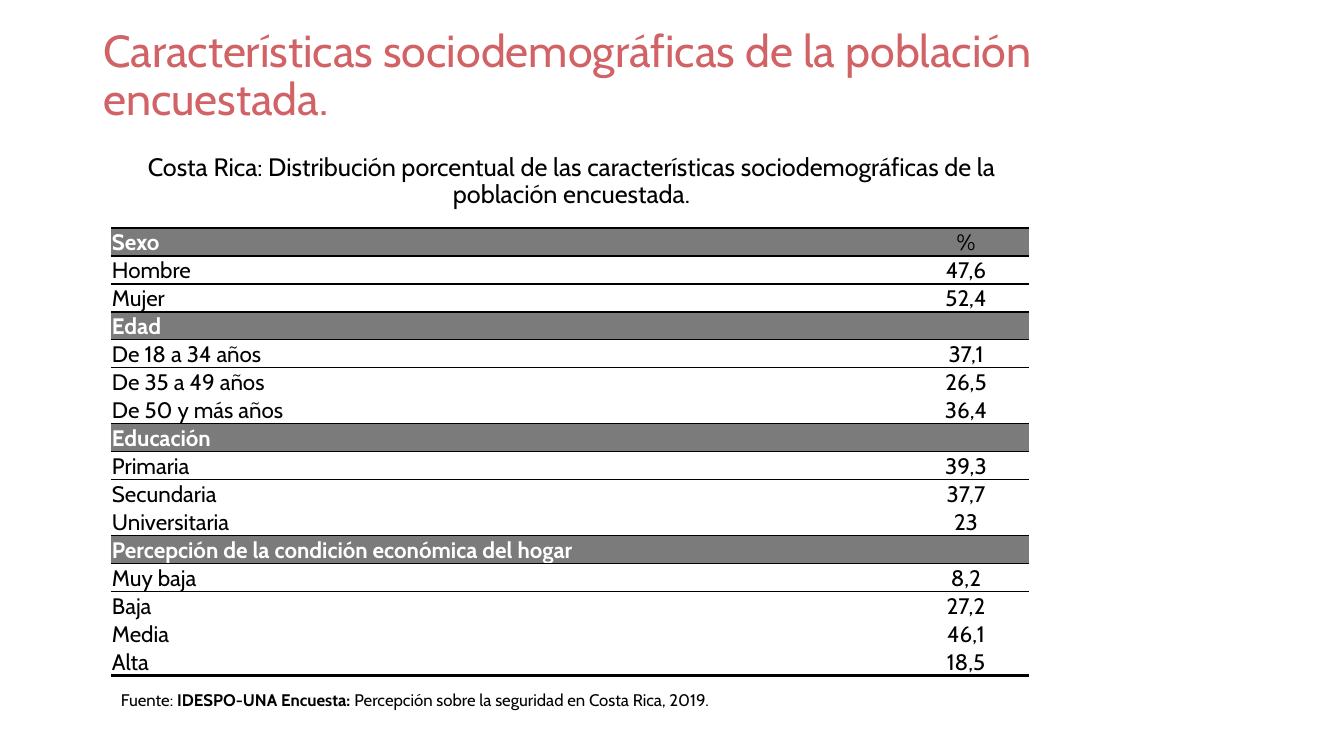
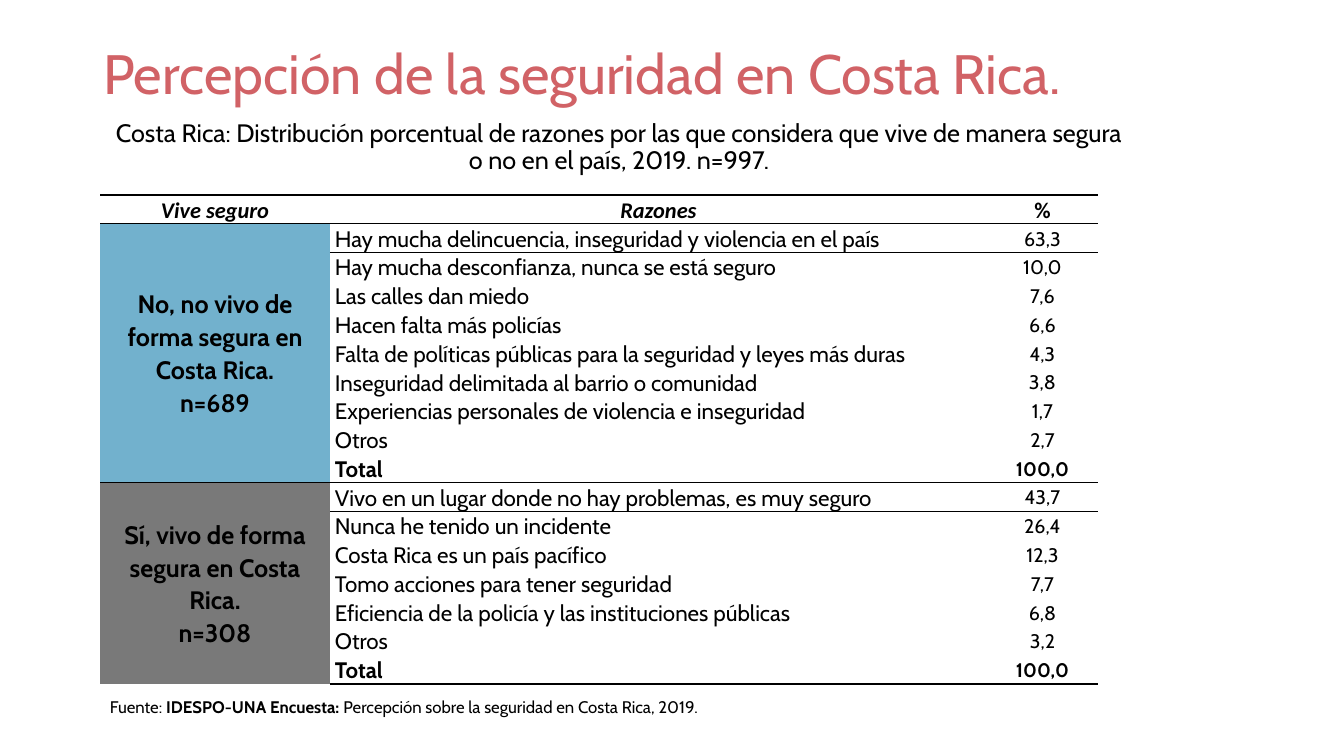
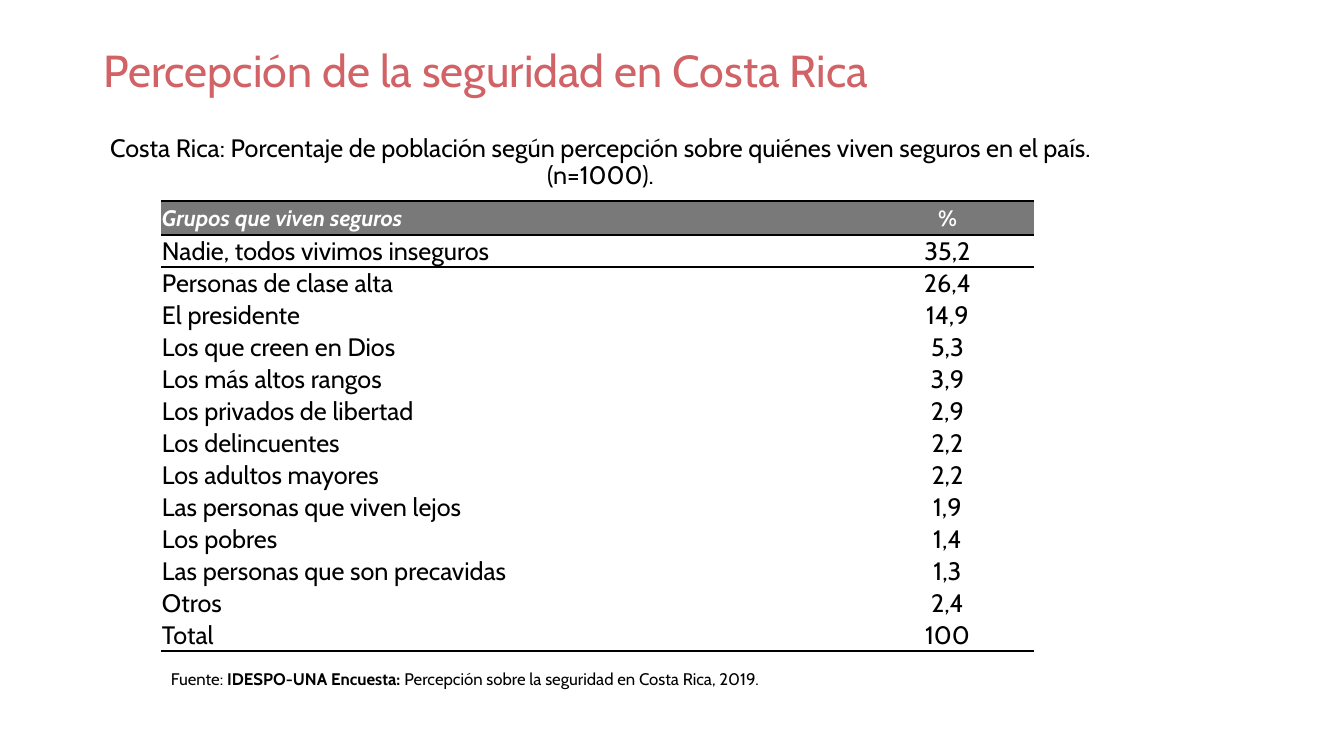
from dataclasses import dataclass, replace

from lxml.etree import SubElement
from pptx import Presentation
from pptx.dml.color import RGBColor
from pptx.enum.text import MSO_ANCHOR, MSO_AUTO_SIZE, PP_ALIGN
from pptx.oxml.ns import qn
from pptx.util import Pt

EMU_PER_PX = 914400 / 100.8
COLORS = {
    "title": "D16266",
    "text": "000000",
    "light": "FFFFFF",
    "section": "7B7B7B",
    "gray": "797979",
    "blue": "72B1CD",
}
PLAIN_TABLE_STYLE = "{2D5ABB26-0587-4C30-8999-92F81FD0307C}"
TIGHT_MARGINS = (1, 1, 1, 0)
SIDE_MARGINS = (5, 0, 5, 0)


@dataclass(frozen=True)
class Style:
    size: float = 16
    color: str = "text"
    bold: bool = False
    italic: bool = False
    font: str = "Cabin"
    align: PP_ALIGN = PP_ALIGN.LEFT
    spacing: float = 1.0
    after: float = 0
    fill: str = ""
    margins: tuple = TIGHT_MARGINS


TITLE = Style(32, "title", spacing=0.9)
SUBTITLE = Style(18, align=PP_ALIGN.CENTER, spacing=0.9)
SOURCE = Style(12)
LABEL = Style()
SECTION = Style(color="light", bold=True, fill="section")
REASON = Style(spacing=1.07, after=8, margins=SIDE_MARGINS)


def px(length):
    return round(length * EMU_PER_PX)


def centered(style, **changes):
    return replace(style, align=PP_ALIGN.CENTER, **changes)


def add_run(paragraph, text, style):
    run = paragraph.add_run()
    run.text = text
    run.font.name = style.font
    run.font.size = Pt(style.size)
    run.font.bold = style.bold
    run.font.italic = style.italic
    run.font.color.rgb = RGBColor.from_string(COLORS[style.color])


def format_paragraph(paragraph, style):
    paragraph.alignment = style.align
    paragraph.line_spacing = style.spacing
    paragraph.space_before = Pt(0)
    paragraph.space_after = Pt(style.after)


def write(paragraph, text, style):
    format_paragraph(paragraph, style)
    for index, line in enumerate(text.split("\n")):
        if index:
            paragraph.add_line_break()
        if line:
            add_run(paragraph, line, style)
    if not text:
        SubElement(paragraph._p, qn("a:endParaRPr"), sz=str(int(style.size * 100)))


def add_text_box(slide, box):
    frame = slide.shapes.add_textbox(*map(px, box)).text_frame
    frame.word_wrap = True
    return frame.paragraphs[0]


def add_title(slide, text, box, style=TITLE):
    title = slide.shapes.title
    title.left, title.top, title.width, title.height = map(px, box)
    frame = title.text_frame
    frame.auto_size = MSO_AUTO_SIZE.NONE
    frame.word_wrap = True
    frame.vertical_anchor = MSO_ANCHOR.MIDDLE
    write(frame.paragraphs[0], text, style)


def add_subtitle(slide, text, left, top, width):
    write(add_text_box(slide, (left, top, width, 64)), text, SUBTITLE)


def add_source(slide, left, top):
    paragraph = add_text_box(slide, (left, top, 647, 30))
    format_paragraph(paragraph, SOURCE)
    add_run(paragraph, "Fuente: ", SOURCE)
    add_run(paragraph, "IDESPO-UNA Encuesta: ", replace(SOURCE, bold=True))
    add_run(paragraph, "Percepción sobre la seguridad en Costa Rica, 2019.", SOURCE)


def add_border(cell, side, width):
    border = SubElement(cell._tc.get_or_add_tcPr(), qn(f"a:{side}"), w=str(Pt(width)))
    fill = SubElement(border, qn("a:solidFill"))
    SubElement(fill, qn("a:srgbClr"), val=COLORS["text"])


def draw_rules(table, rules):
    last = len(table.rows)
    for position, width in sorted(rules.items()):
        for column in range(len(table.columns)):
            if position > 0:
                add_border(table.cell(position - 1, column), "lnB", width)
            if position < last:
                add_border(table.cell(position, column), "lnT", width)


def fill_cell(cell, text, style):
    cell.margin_left, cell.margin_top, cell.margin_right, cell.margin_bottom = map(px, style.margins)
    cell.vertical_anchor = MSO_ANCHOR.MIDDLE
    if style.fill:
        cell.fill.solid()
        cell.fill.fore_color.rgb = RGBColor.from_string(COLORS[style.fill])
    else:
        cell.fill.background()
    write(cell.text_frame.paragraphs[0], text, style)


def add_table(slide, left, top, widths, heights, rows, rules, merges=()):
    box = (left, top, sum(widths), sum(heights))
    table = slide.shapes.add_table(len(rows), len(widths), *map(px, box)).table
    table.first_row = table.horz_banding = False
    table._tbl.tblPr.find(qn("a:tableStyleId")).text = PLAIN_TABLE_STYLE
    for column, width in zip(table.columns, widths):
        column.width = px(width)
    for row, height in zip(table.rows, heights):
        row.height = px(height)
    draw_rules(table, rules)
    for first, last in merges:
        table.cell(first, 0).merge(table.cell(last, 0))
    for row, contents in zip(table.rows, rows):
        for cell, (text, style) in zip(row.cells, contents):
            fill_cell(cell, text, style)


def build_demographics(slide):
    sections = {
        "Sexo": [("Hombre", "47,6"), ("Mujer", "52,4")],
        "Edad": [("De 18 a 34 años", "37,1"), ("De 35 a 49 años", "26,5"), ("De 50 y más años", "36,4")],
        "Educación": [("Primaria", "39,3"), ("Secundaria", "37,7"), ("Universitaria", "23")],
        "Percepción de la condición económica del hogar": [
            ("Muy baja", "8,2"), ("Baja", "27,2"), ("Media", "46,1"), ("Alta", "18,5"),
        ],
    }
    rows, rules = [], {}
    for section, answers in sections.items():
        rules.update({len(rows): 1, len(rows) + 1: 1})
        percent = "" if rows else "%"
        rows.append([(section, SECTION), (percent, centered(LABEL, fill="section"))])
        rows += [[(label, LABEL), (value, centered(LABEL))] for label, value in answers]
    rules[len(rows)] = 2
    add_title(slide, "Características sociodemográficas de la población encuestada.", (93, 4, 957, 146))
    add_subtitle(
        slide,
        "Costa Rica: Distribución porcentual de las características sociodemográficas de la población encuestada.",
        93, 150, 957,
    )
    add_table(slide, 111, 228, (792, 126), [28] * len(rows), rows, rules)
    add_source(slide, 111, 685)


def build_reasons(slide):
    groups = [
        ("No, no vivo de forma segura en Costa Rica.\nn=689", "blue", [
            ("Hay mucha delincuencia, inseguridad y violencia en el país", "63,3"),
            ("Hay mucha desconfianza, nunca se está seguro", "10,0"),
            ("Las calles dan miedo", "7,6"),
            ("Hacen falta más policías", "6,6"),
            ("Falta de políticas públicas para la seguridad y leyes más duras", "4,3"),
            ("Inseguridad delimitada al barrio o comunidad", "3,8"),
            ("Experiencias personales de violencia e inseguridad", "1,7"),
            ("Otros", "2,7"),
            ("Total", "100,0"),
        ]),
        ("Sí, vivo de forma segura en Costa Rica.\nn=308", "gray", [
            ("Vivo en un lugar donde no hay problemas, es muy seguro", "43,7"),
            ("Nunca he tenido un incidente", "26,4"),
            ("Costa Rica es un país pacífico", "12,3"),
            ("Tomo acciones para tener seguridad", "7,7"),
            ("Eficiencia de la policía y las instituciones públicas", "6,8"),
            ("Otros", "3,2"),
            ("Total", "100,0"),
        ]),
    ]
    header = centered(REASON, font="Calibri", bold=True, italic=True)
    rows = [[("Vive seguro", header), ("Razones", header), ("%", replace(header, italic=False))]]
    rules, merges = {0: 2.25}, []
    for group, color, reasons in groups:
        first = len(rows)
        rules[first] = 1
        group_style = centered(REASON, size=18, bold=True, fill=color)
        for index, (reason, value) in enumerate(reasons):
            style = replace(REASON, bold=reason == "Total")
            group_text = "" if index else group
            rows.append([(group_text, group_style), (reason, style), (value, centered(style, size=14))])
        merges.append((first, len(rows) - 1))
    rules[len(rows)] = 2.25
    add_title(slide, "Percepción de la seguridad en Costa Rica.", (93, 4, 1119, 146), replace(TITLE, size=39.6))
    add_subtitle(
        slide,
        "Costa Rica: Distribución porcentual de razones por las que considera que vive de manera segura"
        " o no en el país, 2019. n=997.",
        100, 116, 1038,
    )
    add_source(slide, 100, 692)
    add_table(slide, 100, 195, (230, 657, 111), [28] * len(rows), rows, rules, merges)


def build_safe_groups(slide):
    answers = [
        ("Nadie, todos vivimos inseguros", "35,2"),
        ("Personas de clase alta", "26,4"),
        ("El presidente", "14,9"),
        ("Los que creen en Dios", "5,3"),
        ("Los más altos rangos", "3,9"),
        ("Los privados de libertad", "2,9"),
        ("Los delincuentes", "2,2"),
        ("Los adultos mayores", "2,2"),
        ("Las personas que viven lejos", "1,9"),
        ("Los pobres", "1,4"),
        ("Las personas que son precavidas", "1,3"),
        ("Otros", "2,4"),
        ("Total", "100"),
    ]
    header = replace(SECTION, fill="gray", italic=True)
    answer = replace(LABEL, size=18)
    rows = [[("Grupos que viven seguros", header), ("%", centered(header, italic=False))]]
    rows += [[(label, answer), (value, centered(answer))] for label, value in answers]
    add_title(slide, "Percepción de la seguridad en Costa Rica", (93, 0, 1092, 146))
    add_subtitle(
        slide,
        "Costa Rica: Porcentaje de población según percepción sobre quiénes viven seguros en el país. (n=1000).",
        88, 131, 1025,
    )
    add_table(
        slide, 161, 201, (700, 173), [34] + [32] * len(answers), rows,
        {0: 2, 1: 1.5, len(rows): 2},
    )
    add_source(slide, 161, 664)


def main():
    presentation = Presentation()
    presentation.slide_width = px(1344)
    presentation.slide_height = px(756)
    title_only = presentation.slide_layouts[5]
    for build in (build_demographics, build_reasons, build_safe_groups):
        build(presentation.slides.add_slide(title_only))
    presentation.save("out.pptx")


if __name__ == "__main__":
    main()
